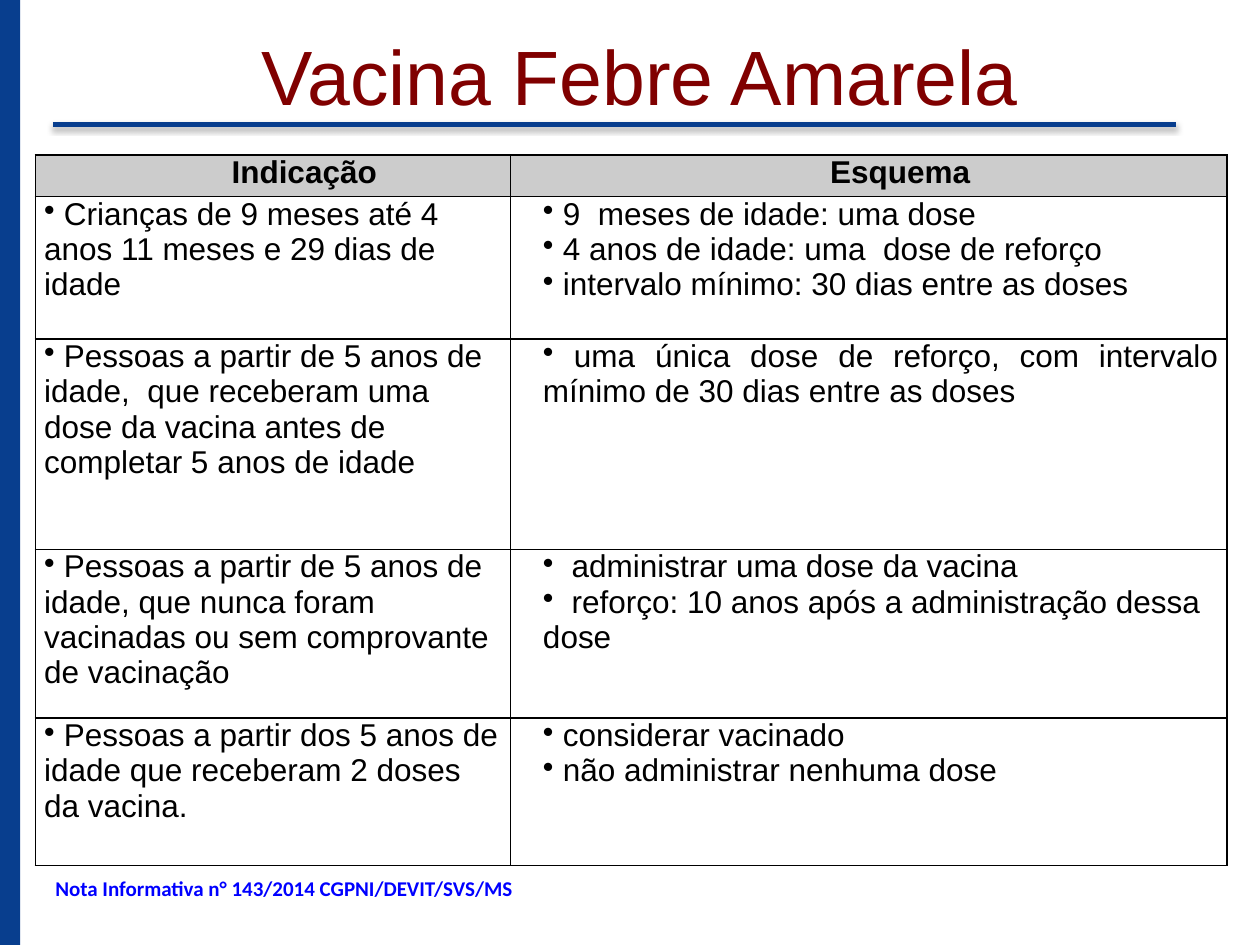
import pptx
import pptx.util
import pptx.dml.color
import pptx.enum.shapes
import pptx.enum.text
import pptx.oxml
import pptx.oxml.ns

Inches, Pt = pptx.util.Inches, pptx.util.Pt
RGBColor = pptx.dml.color.RGBColor
ALIGN = pptx.enum.text.PP_ALIGN
ANCHOR = pptx.enum.text.MSO_ANCHOR
qn = pptx.oxml.ns.qn
NS = 'xmlns:a="http://schemas.openxmlformats.org/drawingml/2006/main"'

BLUE = RGBColor(0x08, 0x3E, 0x8E)
MAROON = RGBColor(0x80, 0x00, 0x00)
BLACK = RGBColor(0x00, 0x00, 0x00)
GRAY = RGBColor(0xCC, 0xCC, 0xCC)
NOTE_BLUE = RGBColor(0x00, 0x00, 0xFF)

TITLE = "Vacina Febre Amarela"
NOTE = "Nota Informativa n° 143/2014 CGPNI/DEVIT/SVS/MS"
HEADERS = ["Indicação", "Esquema"]
ROWS = [
    ([" Crianças de 9 meses até 4 anos 11 meses e 29 dias de idade"],
     [" 9  meses de idade: uma dose",
      " 4 anos de idade: uma  dose de reforço",
      " intervalo mínimo: 30 dias entre as doses"]),
    ([" Pessoas a partir de 5 anos de idade,  que receberam uma dose da vacina "
      "antes de completar 5 anos de idade"],
     [" uma única dose de reforço, com intervalo mínimo de 30 dias entre as doses"]),
    ([" Pessoas a partir de 5 anos de idade, que nunca foram vacinadas ou sem "
      "comprovante de vacinação"],
     ["  administrar uma dose da vacina",
      "  reforço: 10 anos após a administração dessa dose"]),
    ([" Pessoas a partir dos 5 anos de idade que receberam 2 doses da vacina."],
     [" considerar vacinado",
      " não administrar nenhuma dose"]),
]
JUSTIFIED = (2, 1)
COL_WIDTHS = [3.77, 5.69]
ROW_HEIGHTS = [0.33, 1.13, 1.67, 1.34, 1.17]
HEADER_INDENT = 0.5
BODY_INDENTS = [0, 0.19]


def add_run(p, text, size, font, color, bold=False):
    r = p.add_run()
    r.text = text
    r.font.size = Pt(size)
    r.font.name = font
    r.font.bold = bold
    r.font.color.rgb = color


def set_indent(p, left, bullet=None):
    pPr = p._p.get_or_add_pPr()
    pPr.set("marL", str(Inches(left)))
    pPr.set("indent", "0")
    if bullet:
        pPr.append(pptx.oxml.parse_xml(f'<a:buChar {NS} char="{bullet}"/>'))


def set_borders(cell):
    tcPr = cell._tc.get_or_add_tcPr()
    for i, side in enumerate("LRTB"):
        tcPr.insert(i, pptx.oxml.parse_xml(
            f'<a:ln{side} {NS} w="{Pt(1)}"><a:solidFill><a:srgbClr val="{BLACK}"/>'
            f'</a:solidFill></a:ln{side}>'))


def fill_cell(cell, lines, indent, header, align):
    cell.margin_left = cell.margin_right = Inches(0.07)
    cell.margin_top = cell.margin_bottom = 0
    cell.vertical_anchor = ANCHOR.TOP
    if header:
        cell.fill.solid()
        cell.fill.fore_color.rgb = GRAY
    else:
        cell.fill.background()
    set_borders(cell)
    tf = cell.text_frame
    for i, line in enumerate(lines):
        p = tf.add_paragraph() if i else tf.paragraphs[0]
        p.alignment = align
        set_indent(p, indent, None if header else "•")
        add_run(p, line, 18, "Arial", BLACK, header)


def add_side_bar(s):
    sp = s.shapes.add_shape(pptx.enum.shapes.MSO_SHAPE.RECTANGLE,
                            0, 0, Inches(0.16), Inches(7.5))
    sp.shadow.inherit = False
    sp.fill.solid()
    sp.fill.fore_color.rgb = BLUE
    sp.line.fill.background()


def add_title_rule(s):
    ln = s.shapes.add_connector(pptx.enum.shapes.MSO_CONNECTOR.STRAIGHT,
                                Inches(0.42), Inches(0.99), Inches(9.33), Inches(0.99))
    ln.line.color.rgb = BLUE
    ln.line.width = Pt(3)
    ln._element.spPr.append(pptx.oxml.parse_xml(
        f'<a:effectLst {NS}><a:outerShdw blurRad="{Pt(3.1)}" dist="{Pt(1.8)}" '
        f'dir="5400000" rotWithShape="0"><a:srgbClr val="{BLACK}">'
        f'<a:alpha val="35000"/></a:srgbClr></a:outerShdw></a:effectLst>'))


def format_title(s):
    sp = s.shapes.title
    sp.left, sp.top, sp.width, sp.height = map(Inches, (0.83, 0.13, 8.5, 1.25))
    tf = sp.text_frame
    tf.vertical_anchor = ANCHOR.TOP
    tf.margin_top = Inches(0.1)
    p = tf.paragraphs[0]
    p.alignment = ALIGN.CENTER
    add_run(p, TITLE, 44, "Arial", MAROON)


def add_schedule(s):
    frame = s.shapes.add_table(len(ROW_HEIGHTS), len(COL_WIDTHS), Inches(0.28), Inches(1.23),
                               Inches(sum(COL_WIDTHS)), Inches(sum(ROW_HEIGHTS)))
    table = frame.table
    table.horz_banding = False
    table.first_row = False
    for col, width in zip(table.columns, COL_WIDTHS):
        col.width = Inches(width)
    for row, height in zip(table.rows, ROW_HEIGHTS):
        row.height = Inches(height)
    for c, text in enumerate(HEADERS):
        fill_cell(table.cell(0, c), [text], HEADER_INDENT, True, ALIGN.CENTER)
    for r, row in enumerate(ROWS, 1):
        for c, lines in enumerate(row):
            align = ALIGN.JUSTIFY if (r, c) == JUSTIFIED else ALIGN.LEFT
            fill_cell(table.cell(r, c), lines, BODY_INDENTS[c], False, align)


def add_note(s):
    sp = s.shapes.add_textbox(Inches(0.34), Inches(6.9), Inches(3.88), Inches(0.3))
    tf = sp.text_frame
    tf.word_wrap = False
    tf.auto_size = pptx.enum.text.MSO_AUTO_SIZE.SHAPE_TO_FIT_TEXT
    add_run(tf.paragraphs[0], NOTE, 12, "Calibri", NOTE_BLUE, True)


def main():
    prs = pptx.Presentation()
    prs.slide_width, prs.slide_height = Inches(10), Inches(7.5)
    s = prs.slides.add_slide(prs.slide_layouts[5])
    add_side_bar(s)
    add_title_rule(s)
    format_title(s)
    add_schedule(s)
    add_note(s)
    prs.save("out.pptx")


if __name__ == "__main__":
    main()
